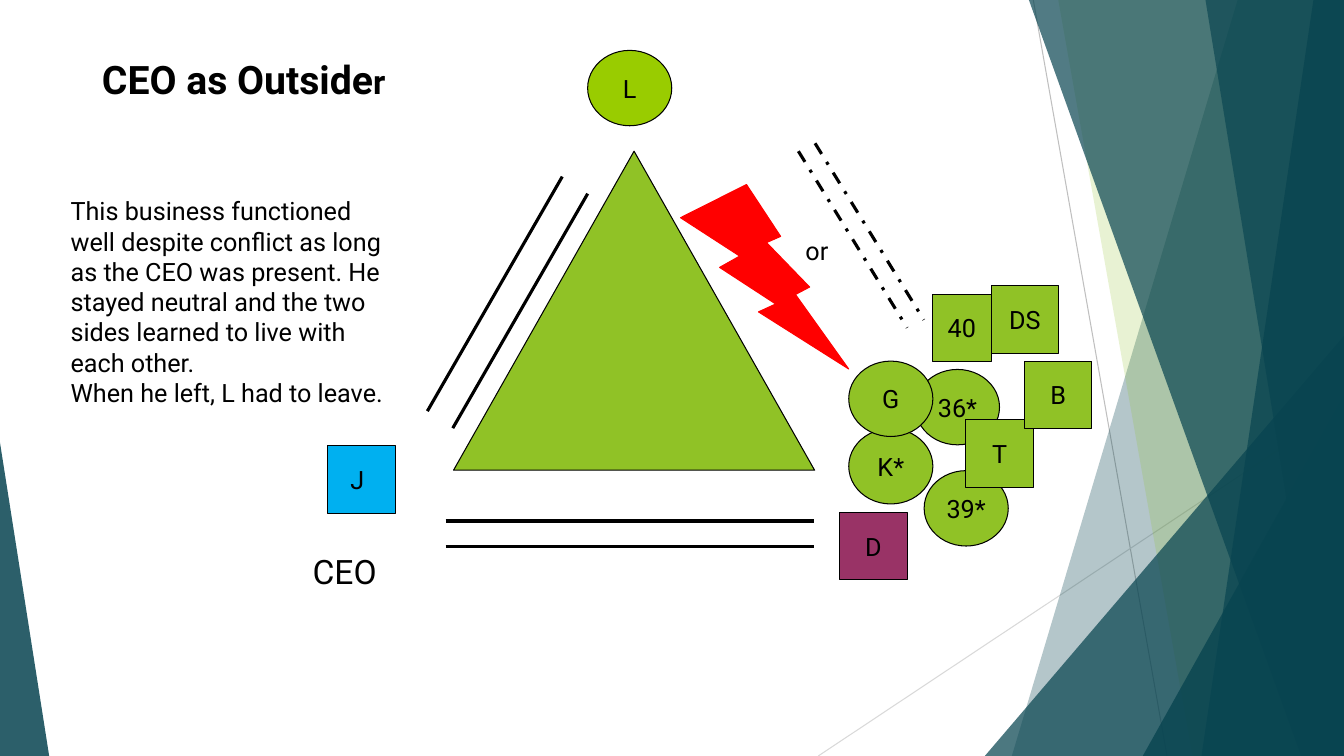
from dataclasses import dataclass

from lxml.etree import SubElement
from pptx import Presentation
from pptx.dml.color import RGBColor
from pptx.enum.dml import MSO_LINE_DASH_STYLE as Dash
from pptx.enum.shapes import MSO_CONNECTOR as Conn, MSO_SHAPE as Kind
from pptx.enum.text import MSO_ANCHOR as Anchor, PP_ALIGN as Align
from pptx.oxml.ns import qn
from pptx.util import Cm, Pt


@dataclass(frozen=True)
class Theme:
    font: str = "Roboto"
    black: str = "000000"
    teal: str = "084450"
    green: str = "90C226"
    lime: str = "99CC00"
    red: str = "FF0000"
    blue: str = "00B0F0"
    plum: str = "993366"
    gray: str = "BFBFBF"
    pale: str = "D9D9D9"
    body: int = 18
    large: int = 24
    title: int = 28
    thin: float = 0.75
    thick: float = 2.25


LOOK = Theme()
WIDE, HIGH = 33.87, 19.05


def paint(shape, fill, alpha=100, edge=None):
    shape.shadow.inherit = False
    shape.fill.solid()
    shape.fill.fore_color.rgb = RGBColor.from_string(fill)
    if alpha < 100:
        color = shape.fill._xPr.find(qn("a:solidFill"))[0]
        SubElement(color, qn("a:alpha")).set("val", str(alpha * 1000))
    if edge:
        shape.line.color.rgb = RGBColor.from_string(edge)
        shape.line.width = Pt(LOOK.thin)
    else:
        shape.line.fill.background()


def form(slide, kind, x, y, w, h, fill, alpha=100, edge=None, tip=None):
    shape = slide.shapes.add_shape(kind, Cm(x), Cm(y), Cm(w), Cm(h))
    paint(shape, fill, alpha, edge)
    if tip is not None:
        shape.adjustments[0] = tip
    return shape


def band(slide, top, base, fill, alpha):
    pen = slide.shapes.build_freeform(Cm(top), 0)
    edge = [(WIDE, 0), (WIDE, HIGH), (base, HIGH)]
    pen.add_line_segments([(Cm(x), Cm(y)) for x, y in edge], close=True)
    paint(pen.convert_to_shape(), fill, alpha)


def rule(slide, x1, y1, x2, y2, color=LOOK.black, width=LOOK.thick, dash=None):
    line = slide.shapes.add_connector(Conn.STRAIGHT, Cm(x1), Cm(y1), Cm(x2), Cm(y2))
    line.line.color.rgb = RGBColor.from_string(color)
    line.line.width = Pt(width)
    if dash:
        line.line.dash_style = dash
    SubElement(line._element.spPr, qn("a:effectLst"))


def pair(slide, x1, y1, x2, y2, dx, dy, dash=None):
    for n in range(2):
        rule(slide, x1 + n * dx, y1 + n * dy, x2 + n * dx, y2 + n * dy, dash=dash)


def write(shape, *paras, size=LOOK.body, bold=False, align=Align.LEFT,
          anchor=Anchor.TOP, left=0):
    frame = shape.text_frame
    frame.word_wrap = True
    frame.vertical_anchor = anchor
    frame.margin_left = Cm(left)
    frame.margin_right = frame.margin_top = frame.margin_bottom = 0
    for n, text in enumerate(paras):
        para = frame.add_paragraph() if n else frame.paragraphs[0]
        para.alignment = align
        add_run(para, text, size, bold)
    return para


def add_run(para, text, size, bold=False):
    run = para.add_run()
    run.text = text
    run.font.name = LOOK.font
    run.font.size = Pt(size)
    run.font.bold = bold
    run.font.color.rgb = RGBColor.from_string(LOOK.black)


def label(slide, x, y, w, h, *paras, **style):
    box = slide.shapes.add_textbox(Cm(x), Cm(y), Cm(w), Cm(h))
    return write(box, *paras, **style)


def person(slide, kind, text, x, y, fill=LOOK.green, w=None, **style):
    wide, high = (2.12, 1.9) if kind == Kind.OVAL else (1.7, 1.7)
    shape = form(slide, kind, x, y, w or wide, high, fill, edge=LOOK.black)
    write(shape, text, anchor=Anchor.MIDDLE, **{"align": Align.CENTER, **style})


def decor(slide):
    rule(slide, 26.04, 0, 29.41, HIGH, LOOK.gray, LOOK.thin)
    rule(slide, WIDE, 10.24, 20.62, HIGH, LOOK.pale, LOOK.thin)

    def wedge(x, y, w, alpha, tip):
        form(slide, Kind.ISOSCELES_TRIANGLE, x, y, w, HIGH - y, LOOK.teal, alpha, tip=tip)

    band(slide, 31.19, 25.5, LOOK.teal, 30)
    band(slide, 26.67, 30.05, LOOK.green, 20)
    wedge(24.82, 8.46, 9.05, 72, 1)
    band(slide, 25.93, 32.79, LOOK.teal, 70)
    band(slide, 33.1, 30.28, LOOK.teal, 70)
    band(slide, 30.38, 33.48, LOOK.teal, 65)
    wedge(28.8, 9.98, 5.07, 80, 1)
    wedge(0, 11.15, 1.24, 85, 0)


def main():
    deck = Presentation()
    deck.slide_width, deck.slide_height = Cm(WIDE), Cm(HIGH)
    slide = deck.slides.add_slide(deck.slide_layouts[6])
    decor(slide)

    form(slide, Kind.ISOSCELES_TRIANGLE, 11.43, 3.81, 9.1, 8.04, LOOK.green,
         edge=LOOK.black)
    form(slide, Kind.LIGHTNING_BOLT, 17.15, 4.65, 4.24, 4.65, LOOK.red, edge=LOOK.red)
    pair(slide, 14.17, 4.45, 10.77, 10.36, 0.64, 0.43)
    pair(slide, 11.23, 13.13, 20.52, 13.13, 0, 0.64)
    pair(slide, 20.12, 3.81, 22.86, 8.26, 0.42, -0.2, Dash.DASH_DOT)

    person(slide, Kind.RECTANGLE, "J", 8.26, 11.23, LOOK.blue, align=Align.LEFT, left=0.57)
    person(slide, Kind.OVAL, "L", 14.81, 1.27, LOOK.lime)
    person(slide, Kind.OVAL, "K*", 21.39, 10.8)
    person(slide, Kind.OVAL, "36*", 23.07, 9.31)
    person(slide, Kind.OVAL, "39*", 23.29, 11.86)
    person(slide, Kind.RECTANGLE, "D", 21.16, 12.91, LOOK.plum)
    person(slide, Kind.RECTANGLE, "40", 23.5, 7.41, w=1.48)
    person(slide, Kind.OVAL, "G", 21.39, 9.1)
    person(slide, Kind.RECTANGLE, "T", 24.34, 10.58)
    person(slide, Kind.RECTANGLE, "B", 25.82, 9.1)
    person(slide, Kind.RECTANGLE, "DS", 24.98, 7.2)

    label(slide, 20.3, 5.94, 1.2, 0.8, "or")
    label(slide, 7.88, 13.89, 2.7, 1.05, "CEO", size=LOOK.large)
    label(slide, 1.78, 4.93, 8.08, 6.15,
          "This business functioned well despite conflict as long as the CEO was "
          "present. He stayed neutral and the two sides learned to live with each other.",
          "When he left, L had to leave.")
    title = label(slide, 2.57, 1.4, 8.2, 1.2, "CEO as Outside", size=LOOK.title, bold=True)
    add_run(title, "r", LOOK.large, True)
    deck.save("out.pptx")


if __name__ == "__main__":
    main()
